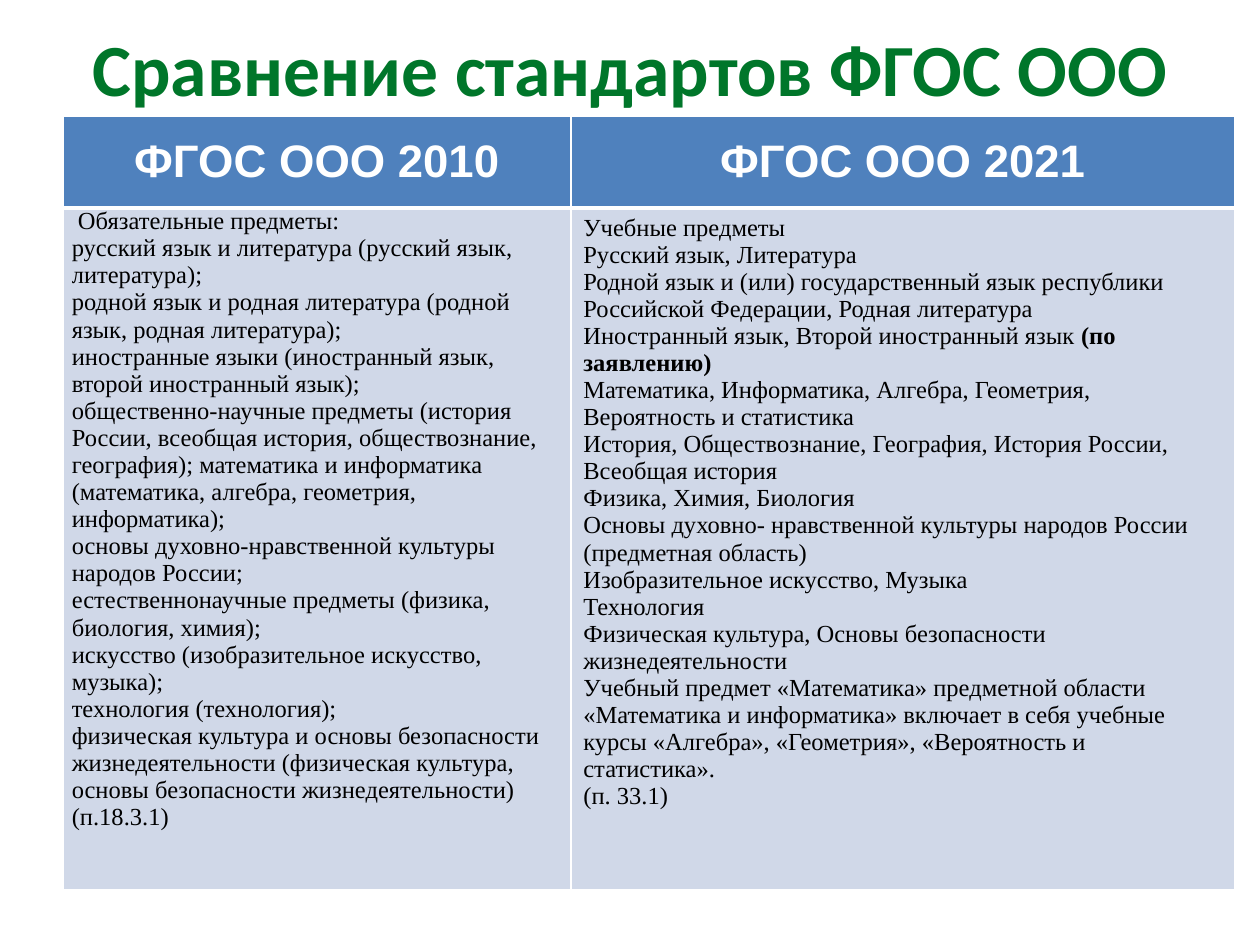
"""Builds a slide comparing the subject lists of two school standards."""
import pptx
import pptx.util
import pptx.dml.color
import pptx.enum.text
import pptx.oxml
import pptx.oxml.ns

COLORS = {"title": "00762A", "head": "4F81BD", "body": "D0D8E8", "white": "FFFFFF", "text": "000000"}
TITLE = "Сравнение стандартов ФГОС ООО"
HEADS = ["ФГОС ООО 2010", "ФГОС ООО 2021"]
BOLD = "(по заявлению)"
SUBJECTS = [
    [
        "\u00a0Обязательные предметы:".replace("\u00a0", " "),
        "русский язык и литература (русский язык, литература);",
        "родной язык и родная литература (родной язык, родная литература);",
        "иностранные языки (иностранный язык, второй иностранный язык);",
        "общественно-научные предметы (история России, всеобщая история, обществознание, география); "
        "математика и информатика (математика, алгебра, геометрия, информатика);",
        "основы духовно-нравственной культуры народов России;",
        "естественнонаучные предметы (физика, биология, химия);",
        "искусство (изобразительное искусство, музыка);",
        "технология (технология);",
        "физическая культура и основы безопасности жизнедеятельности (физическая культура, "
        "основы безопасности жизнедеятельности) (п.18.3.1)",
    ],
    [
        "Учебные предметы",
        "Русский язык, Литература",
        "Родной язык и (или) государственный язык республики Российской Федерации, Родная литература",
        "Иностранный язык, Второй иностранный язык " + BOLD,
        "Математика, Информатика, Алгебра, Геометрия, Вероятность и статистика",
        "История, Обществознание, География, История России, Всеобщая история",
        "Физика, Химия, Биология",
        "Основы духовно- нравственной культуры народов России (предметная область)",
        "Изобразительное искусство, Музыка",
        "Технология",
        "Физическая культура, Основы безопасности жизнедеятельности",
        "Учебный предмет «Математика» предметной области «Математика и информатика» включает в себя "
        "учебные курсы «Алгебра», «Геометрия», «Вероятность и статистика».",
        "(п. 33.1)",
    ],
]
COLS, ROWS = [4.03, 5.27], [0.73, 5.41]
FORMATS = {
    "title": {"size": pptx.util.Pt(42), "name": "Calibri", "bold": True},
    "head": {"size": pptx.util.Pt(26), "name": "Arial", "bold": True},
    "body": {"size": pptx.util.Pt(14), "name": "Times New Roman", "bold": False},
}
MARGINS = {"margin_left": 0.07, "margin_right": 0.07, "margin_top": 0, "margin_bottom": 0}
CENTER = pptx.enum.text.PP_ALIGN.CENTER
MIDDLE = pptx.enum.text.MSO_ANCHOR.MIDDLE


def add_run(p, text, kind, color, **changes):
    r = p.add_run()
    r.text = text
    for key, value in {**FORMATS[kind], **changes}.items():
        setattr(r.font, key, value)
    r.font.color.rgb = pptx.dml.color.RGBColor.from_string(COLORS[color])


def style_cell(cell, kind, bottom):
    cell.fill.solid()
    cell.fill.fore_color.rgb = pptx.dml.color.RGBColor.from_string(COLORS[kind])
    tc_pr = cell._tc.get_or_add_tcPr()
    for i, (side, width) in enumerate({"L": 1, "R": 1, "T": 1 if kind == "head" else 3, "B": bottom}.items()):
        tc_pr.insert(i, pptx.oxml.parse_xml(
            f'<a:ln{side} {pptx.oxml.ns.nsdecls("a")} w="{pptx.util.Pt(width)}"><a:solidFill>'
            f'<a:srgbClr val="{COLORS["white"]}"/></a:solidFill></a:ln{side}>'))


def main():
    prs = pptx.Presentation()
    prs.slide_width, prs.slide_height = pptx.util.Inches(10), pptx.util.Inches(7.5)
    s = prs.slides.add_slide(prs.slide_layouts[5])

    title = s.shapes.title
    for key, value in {"left": 0.5, "top": 0.3, "width": 9, "height": 0.46}.items():
        setattr(title, key, pptx.util.Inches(value))
    tf = title.text_frame
    tf.vertical_anchor = MIDDLE
    tf.paragraphs[0].alignment = CENTER
    add_run(tf.paragraphs[0], TITLE, "title", "title")

    box = [pptx.util.Inches(v) for v in (0.5, 0.92, sum(COLS), sum(ROWS))]
    table = s.shapes.add_table(len(ROWS), len(COLS), *box).table
    for row, height in zip(table.rows, ROWS):
        row.height = pptx.util.Inches(height)
    for c, (head, subjects, width) in enumerate(zip(HEADS, SUBJECTS, COLS)):
        table.columns[c].width = pptx.util.Inches(width)
        cell = table.cell(0, c)
        style_cell(cell, "head", 3)
        cell.vertical_anchor = MIDDLE
        p = cell.text_frame.paragraphs[0]
        p.alignment = CENTER
        add_run(p, head, "head", "white")

        cell = table.cell(1, c)
        style_cell(cell, "body", 1)
        tf = cell.text_frame
        for i, line in enumerate(subjects):
            p = tf.add_paragraph() if i else tf.paragraphs[0]
            plain, bold, _ = line.partition(BOLD)
            add_run(p, plain, "body", "text")
            if bold:
                add_run(p, bold, "body", "text", bold=True)
    for key, value in MARGINS.items():
        setattr(table.cell(1, 0), key, pptx.util.Inches(value))

    prs.save("out.pptx")


if __name__ == "__main__":
    main()
